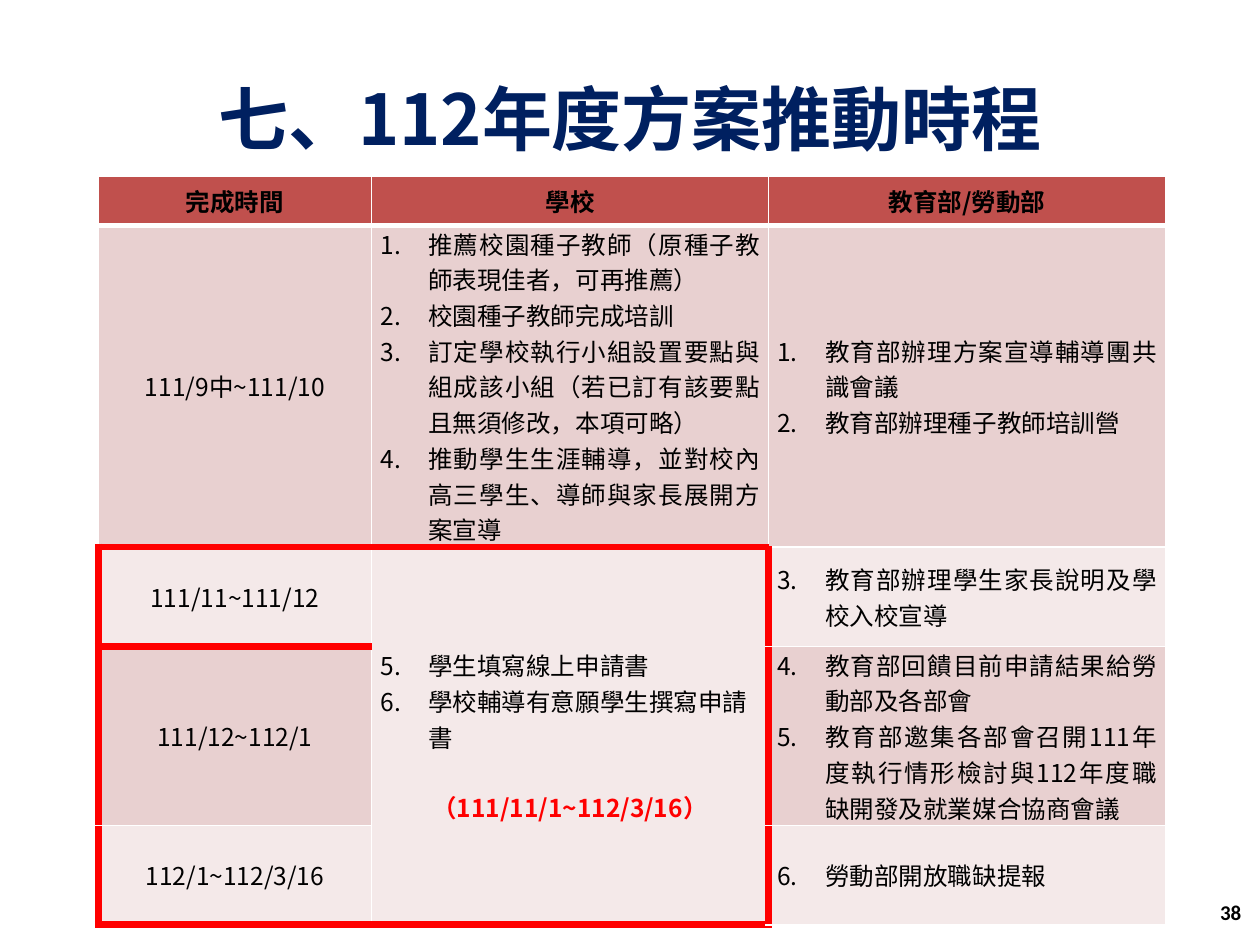
from dataclasses import dataclass

from lxml import etree
from pptx import Presentation
from pptx.dml.color import RGBColor
from pptx.enum.text import MSO_ANCHOR, PP_ALIGN
from pptx.oxml.ns import qn
from pptx.util import Pt

MIDDLE = MSO_ANCHOR.MIDDLE
LEFT, CENTER, RIGHT, JUSTIFY = PP_ALIGN.LEFT, PP_ALIGN.CENTER, PP_ALIGN.RIGHT, PP_ALIGN.JUSTIFY
EMU_PER_PX = 9144
TITLE_ONLY = 5


@dataclass(frozen=True)
class Theme:
    """Colours, fonts and type sizes of the slide."""
    title: str = "002060"
    text: str = "000000"
    alert: str = "FF0000"
    rule: str = "FFFFFF"
    header: str = "C0504D"
    bands: tuple = ("F4E9E9", "E8D0D0")
    cjk: str = "Noto Sans CJK SC"
    latin: str = "Calibri"
    title_size: int = 40
    body_size: int = 14
    number_size: int = 12
    thin: int = 1
    header_rule: int = 3
    thick: float = 4.5


THEME = Theme()
HEADINGS = ("完成時間", "學校", "教育部/勞動部")
PERIODS = ("111/9中~111/10", "111/11~111/12", "111/12~112/1", "112/1~112/3/16")
RECOMMENDING = (
    "推薦校園種子教師（原種子教師表現佳者，可再推薦）",
    "校園種子教師完成培訓",
    "訂定學校執行小組設置要點與組成該小組（若已訂有該要點且無須修改，本項可略）",
    "推動學生生涯輔導，並對校內高三學生、導師與家長展開方案宣導",
)
APPLYING = ("學生填寫線上申請書", "學校輔導有意願學生撰寫申請書")
APPLICATION_DATES = "（111/11/1~112/3/16）"
MINISTRY_TASKS = (
    ("教育部辦理方案宣導輔導團共識會議", "教育部辦理種子教師培訓營"),
    ("教育部辦理學生家長說明及學校入校宣導",),
    ("教育部回饋目前申請結果給勞動部及各部會",
     "教育部邀集各部會召開111年度執行情形檢討與112年度職缺開發及就業媒合協商會議"),
    ("勞動部開放職缺提報",),
)
COLUMN_WIDTHS = (217, 315, 315)
ROW_HEIGHTS = (39, 236, 79, 142, 79)
RED_SIDES = {
    (1, 0): "B", (1, 1): "B",
    (2, 0): "LTB", (2, 1): "TRB", (2, 2): "L",
    (3, 0): "LT", (3, 1): "R", (3, 2): "L",
    (4, 0): "LB", (4, 1): "RB", (4, 2): "L",
}


def px(length):
    """Turn px into EMU."""
    return length * EMU_PER_PX


def place(shape, box):
    """Move a shape to a box of left, top, width and height."""
    shape.left, shape.top, shape.width, shape.height = map(px, box)


def write(paragraph, text, align, size=THEME.body_size, color=THEME.text,
          bold=False, face=THEME.cjk):
    """Fill a paragraph with text in one format."""
    paragraph.text = text
    paragraph.alignment = align
    font = paragraph.font
    font.size, font.bold, font.name = Pt(size), bold, face
    font.color.rgb = RGBColor.from_string(color)
    latin = paragraph._p.pPr.find(qn("a:defRPr")).find(qn("a:latin"))
    latin.addnext(latin.makeelement(qn("a:ea"), {"typeface": face}))


def write_list(cell, items, start, align=JUSTIFY):
    """Write numbered items into a cell, counting from start."""
    frame = cell.text_frame
    for index, item in enumerate(items):
        paragraph = frame.add_paragraph() if index else frame.paragraphs[0]
        properties = paragraph._p.get_or_add_pPr()
        properties.set("marL", str(px(38)))
        properties.set("indent", str(px(-38)))
        etree.SubElement(properties, qn("a:buFont"), typeface=THEME.cjk)
        etree.SubElement(properties, qn("a:buAutoNum"), type="arabicPeriod", startAt=str(start))
        write(paragraph, item, align)


def draw_border(cell, side, color, width):
    """Draw one side of a cell."""
    line = etree.SubElement(cell._tc.get_or_add_tcPr(), qn(f"a:ln{side}"), w=str(Pt(width)))
    fill = etree.SubElement(line, qn("a:solidFill"))
    etree.SubElement(fill, qn("a:srgbClr"), val=color)


def style_cell(cell, row, column):
    """Set margins, borders and fill of a cell by its position."""
    cell.margin_left = cell.margin_right = px(7)
    cell.margin_top = cell.margin_bottom = 0
    cell.vertical_anchor = MIDDLE
    for side in "LRTB":
        if side in RED_SIDES.get((row, column), ""):
            draw_border(cell, side, THEME.alert, THEME.thick)
        elif not cell.is_spanned:
            below_header = (row, side) in ((0, "B"), (1, "T"))
            draw_border(cell, side, THEME.rule, THEME.header_rule if below_header else THEME.thin)
    cell.fill.solid()
    color = THEME.bands[row % 2] if row else THEME.header
    cell.fill.fore_color.rgb = RGBColor.from_string(color)


def add_title(slide, box):
    """Place the slide title."""
    title = slide.shapes.title
    place(title, box)
    title.text_frame.vertical_anchor = MIDDLE
    write(title.text_frame.paragraphs[0], "七、112年度方案推動時程", CENTER,
          THEME.title_size, THEME.title, True)


def add_schedule(slide, box):
    """Place the schedule table with its red application window."""
    table = slide.shapes.add_table(len(ROW_HEIGHTS), len(COLUMN_WIDTHS), *map(px, box)).table
    table.horz_banding = False
    for column, width in zip(table.columns, COLUMN_WIDTHS):
        column.width = px(width)
    for row, height in zip(table.rows, ROW_HEIGHTS):
        row.height = px(height)
    table.cell(2, 1).merge(table.cell(4, 1))
    for row in range(len(ROW_HEIGHTS)):
        for column in range(len(COLUMN_WIDTHS)):
            style_cell(table.cell(row, column), row, column)

    for column, heading in enumerate(HEADINGS):
        write(table.cell(0, column).text_frame.paragraphs[0], heading, CENTER, bold=True)
    start = 1
    for row, (period, tasks) in enumerate(zip(PERIODS, MINISTRY_TASKS), 1):
        write(table.cell(row, 0).text_frame.paragraphs[0], period, CENTER)
        write_list(table.cell(row, 2), tasks, start)
        start += len(tasks)
    write_list(table.cell(1, 1), RECOMMENDING, 1)
    application = table.cell(2, 1)
    write_list(application, APPLYING, len(RECOMMENDING) + 1, LEFT)
    dates = application.text_frame.add_paragraph()
    dates.space_before = Pt(20)
    write(dates, APPLICATION_DATES, CENTER, color=THEME.alert, bold=True)


def add_page_number(slide, box):
    """Place the page number."""
    frame = slide.shapes.add_textbox(*map(px, box)).text_frame
    frame.word_wrap = True
    frame.vertical_anchor = MIDDLE
    write(frame.paragraphs[0], "38", RIGHT, THEME.number_size, bold=True, face=THEME.latin)


def main():
    """Build and save the slide."""
    deck = Presentation()
    deck.slide_width, deck.slide_height = px(1000), px(750)
    slide = deck.slides.add_slide(deck.slide_layouts[TITLE_ONLY])
    add_title(slide, (0, 62, 1000, 63))
    add_schedule(slide, (78, 140, sum(COLUMN_WIDTHS), sum(ROW_HEIGHTS)))
    add_page_number(slide, (762, 704, 233, 40))
    deck.save("out.pptx")


if __name__ == "__main__":
    main()
